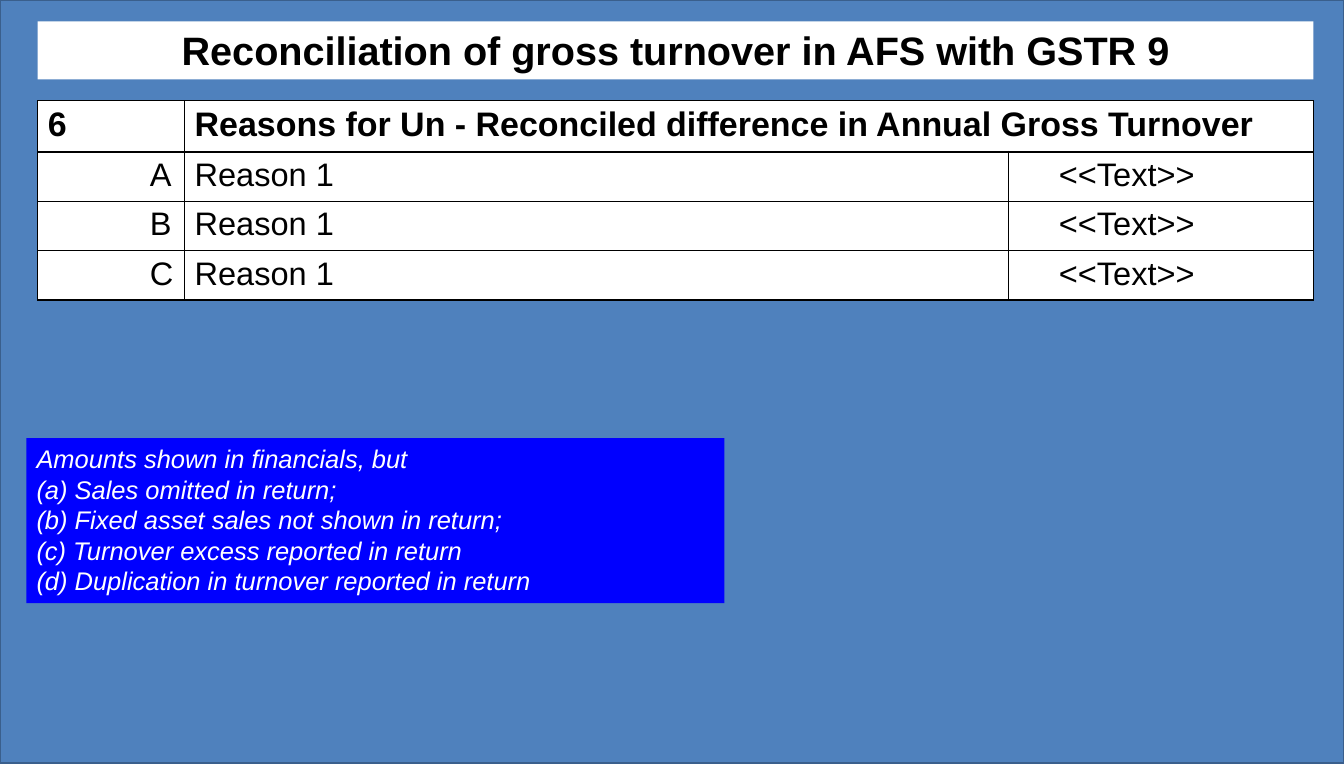
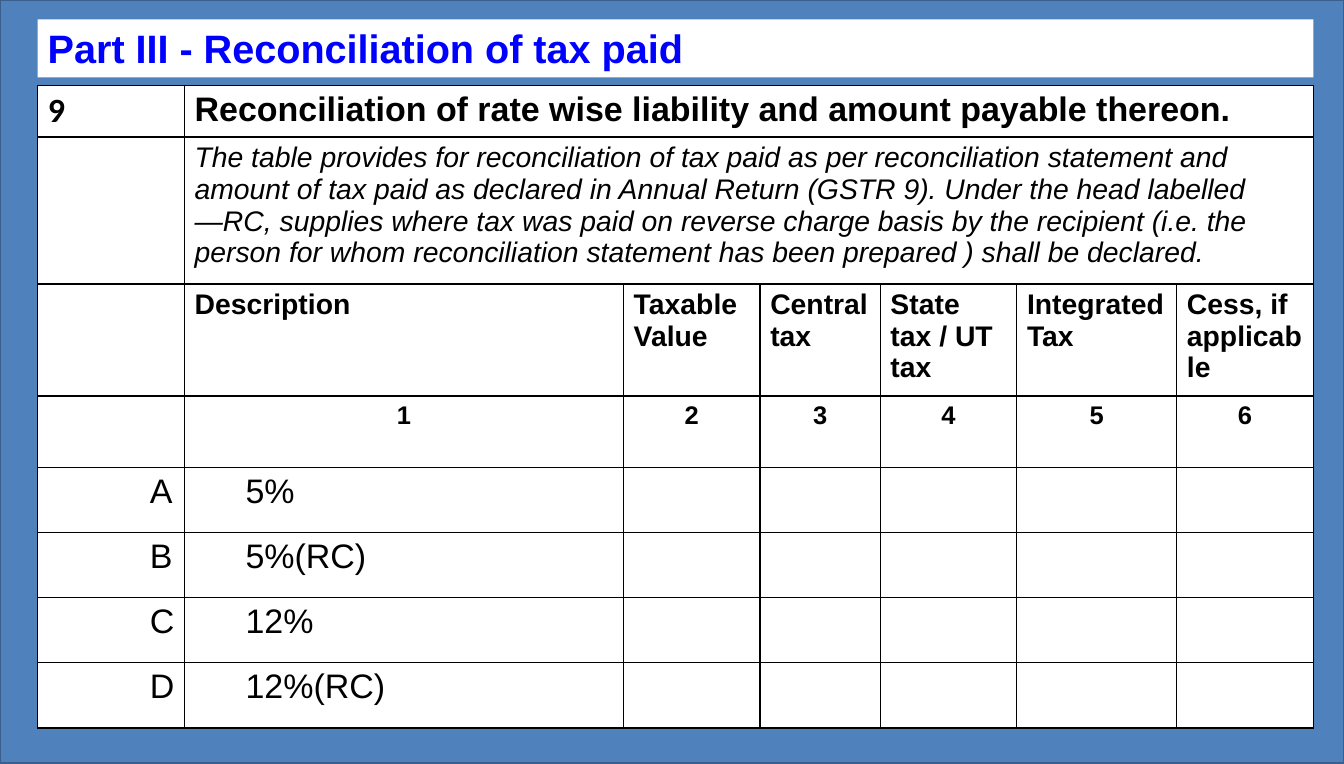
from dataclasses import dataclass, replace

from lxml.etree import SubElement
from pptx import Presentation
from pptx.dml.color import RGBColor
from pptx.enum.shapes import MSO_SHAPE as Shape
from pptx.enum.text import MSO_ANCHOR as Anchor, PP_ALIGN as Align
from pptx.oxml.ns import qn
from pptx.util import Inches, Pt

BLACK = RGBColor(0x00, 0x00, 0x00)
WHITE = RGBColor(0xFF, 0xFF, 0xFF)
BLUE = RGBColor(0x00, 0x00, 0xFF)
STEEL = RGBColor(0x4F, 0x81, 0xBD)
STEEL_DARK = RGBColor(0x3A, 0x5F, 0x8C)

SLIDE_W, SLIDE_H = 13.19, 7.5
MARGIN, CONTENT_W = 0.37, 12.52


@dataclass(frozen=True)
class Style:
    size: float
    bold: bool = False
    italic: bool = False
    color: RGBColor = BLACK
    font: str = "Arial"
    align: Align = Align.LEFT
    indent: float = 0
    right_inset: float = 0.1


TITLE = Style(28, bold=True)
HEADING = Style(24, bold=True)
NOTE = Style(18, italic=True, color=WHITE)
EXPLANATION = Style(20, italic=True)
COLUMN_HEAD = Style(20, bold=True)
COLUMN_NUMBER = Style(18, bold=True, align=Align.CENTER)
REASON = Style(23)
REASON_LETTER = replace(REASON, indent=1)
REASON_VALUE = replace(REASON, align=Align.CENTER, right_inset=0.77)
RATE = Style(24, indent=0.5)
RATE_LETTER = replace(RATE, indent=1)


def write(frame, text, style):
    frame.text = text
    for paragraph in frame.paragraphs:
        paragraph.alignment = style.align
        if style.indent:
            properties = paragraph._p.get_or_add_pPr()
            properties.set("marL", str(Inches(style.indent)))
            properties.set("indent", "0")
        for run in paragraph.runs:
            font = run.font
            font.name, font.size = style.font, Pt(style.size)
            font.bold, font.italic = style.bold, style.italic
            font.color.rgb = style.color


def add_box(slide, box, fill, line=None):
    shape = slide.shapes.add_shape(Shape.RECTANGLE, *map(Inches, box))
    shape.shadow.inherit = False
    shape.fill.solid()
    shape.fill.fore_color.rgb = fill
    if line is None:
        shape.line.fill.background()
    else:
        shape.line.color.rgb = line
        shape.line.width = Pt(2)
    return shape


def add_text_box(slide, box, fill, text, style):
    frame = add_box(slide, box, fill).text_frame
    frame.word_wrap = True
    frame.vertical_anchor = Anchor.TOP
    write(frame, text, style)


def add_framed_slide(deck, title, top, style):
    """Add a slide with the steel background and the white title band."""
    slide = deck.slides.add_slide(deck.slide_layouts[6])
    add_box(slide, (0, 0, SLIDE_W, SLIDE_H), STEEL, STEEL_DARK)
    add_text_box(slide, (MARGIN, top, CONTENT_W, 0.57), WHITE, title, style)
    return slide


def rule_cell(cell, row):
    """Rule all four sides, with a heavier line under the first row."""
    properties = cell._tc.get_or_add_tcPr()
    for side in "LRTB":
        heavy = (row, side) in ((0, "B"), (1, "T"))
        line = SubElement(properties, qn(f"a:ln{side}"), w=str(Pt(2 if heavy else 1)))
        fill = SubElement(line, qn("a:solidFill"))
        SubElement(fill, qn("a:srgbClr"), val=str(BLACK))


def add_ruled_table(slide, top, widths, heights, rows, wide_rows):
    """Fill a table from (text, style) rows; in wide_rows column 2 spans the rest."""
    box = (MARGIN, top, sum(widths), sum(heights))
    table = slide.shapes.add_table(
        len(heights), len(widths), *map(Inches, box)).table
    table.first_row = table.horz_banding = False
    for column, width in zip(table.columns, widths):
        column.width = Inches(width)
    for row, height in zip(table.rows, heights):
        row.height = Inches(height)
    for r, row in enumerate(table.rows):
        for cell in row.cells:
            rule_cell(cell, r)
            cell.fill.solid()
            cell.fill.fore_color.rgb = WHITE
        for cell, (text, style) in zip(row.cells, rows[r]):
            if text:
                write(cell.text_frame, text, style)
                cell.margin_right = Inches(style.right_inset)
    for r in wide_rows:
        table.cell(r, 1).merge(table.cell(r, len(widths) - 1))


def add_turnover_slide(deck):
    slide = add_framed_slide(
        deck, "Reconciliation of gross turnover in AFS with GSTR 9", 0.21,
        replace(TITLE, align=Align.CENTER))
    heading = [
        ("6", HEADING),
        ("Reasons for Un - Reconciled difference in Annual Gross Turnover", HEADING)]
    reasons = [
        [(letter, REASON_LETTER), ("Reason 1", REASON), ("<<Text>>", REASON_VALUE)]
        for letter in "ABC"]
    add_ruled_table(slide, 0.99, [1.44, 8.09, 2.99], [0.5] + [0.485] * 3,
                    [heading] + reasons, wide_rows=[0])
    add_text_box(slide, (0.26, 4.3, 6.85, 1.62), BLUE, "\n".join([
        "Amounts shown in financials, but",
        "(a) Sales omitted in return;",
        "(b) Fixed asset sales not shown in return;",
        "(c) Turnover excess reported in return",
        "(d) Duplication in turnover reported in return",
    ]), NOTE)


def add_tax_paid_slide(deck):
    slide = add_framed_slide(deck, "Part III - Reconciliation of tax paid", 0.19,
                             replace(TITLE, color=BLUE))
    blank = ("", COLUMN_HEAD)
    heading = [
        ("9", replace(HEADING, font="Calibri")),
        ("Reconciliation of rate wise liability and amount payable thereon.", HEADING)]
    explanation = [blank, (
        "The table provides for reconciliation of tax paid as per reconciliation "
        "statement and amount of tax paid as declared in Annual Return (GSTR 9). "
        "Under the head labelled ―RC, supplies where tax was paid on reverse charge "
        "basis by the recipient (i.e. the person for whom reconciliation statement "
        "has been prepared ) shall be declared.", EXPLANATION)]
    names = ["Description", "Taxable Value", "Central tax", "State tax / UT tax",
             "Integrated Tax", "Cess, if applicable"]
    column_heads = [blank] + [(name, COLUMN_HEAD) for name in names]
    numbers = [blank] + [(str(n), COLUMN_NUMBER) for n in range(1, len(names) + 1)]
    rates = [[(letter, RATE_LETTER), (rate, RATE)]
             for letter, rate in zip("ABCD", ["5%", "5%(RC)", "12%", "12%(RC)"])]
    add_ruled_table(slide, 0.84, [1.44, 4.31, 1.34, 1.18, 1.34, 1.57, 1.34],
                    [0.5, 1.44, 1.1, 0.7] + [0.64] * len(rates),
                    [heading, explanation, column_heads, numbers] + rates,
                    wide_rows=[0, 1])


def main():
    deck = Presentation()
    deck.slide_width, deck.slide_height = Inches(SLIDE_W), Inches(SLIDE_H)
    add_turnover_slide(deck)
    add_tax_paid_slide(deck)
    deck.save("out.pptx")


if __name__ == "__main__":
    main()
